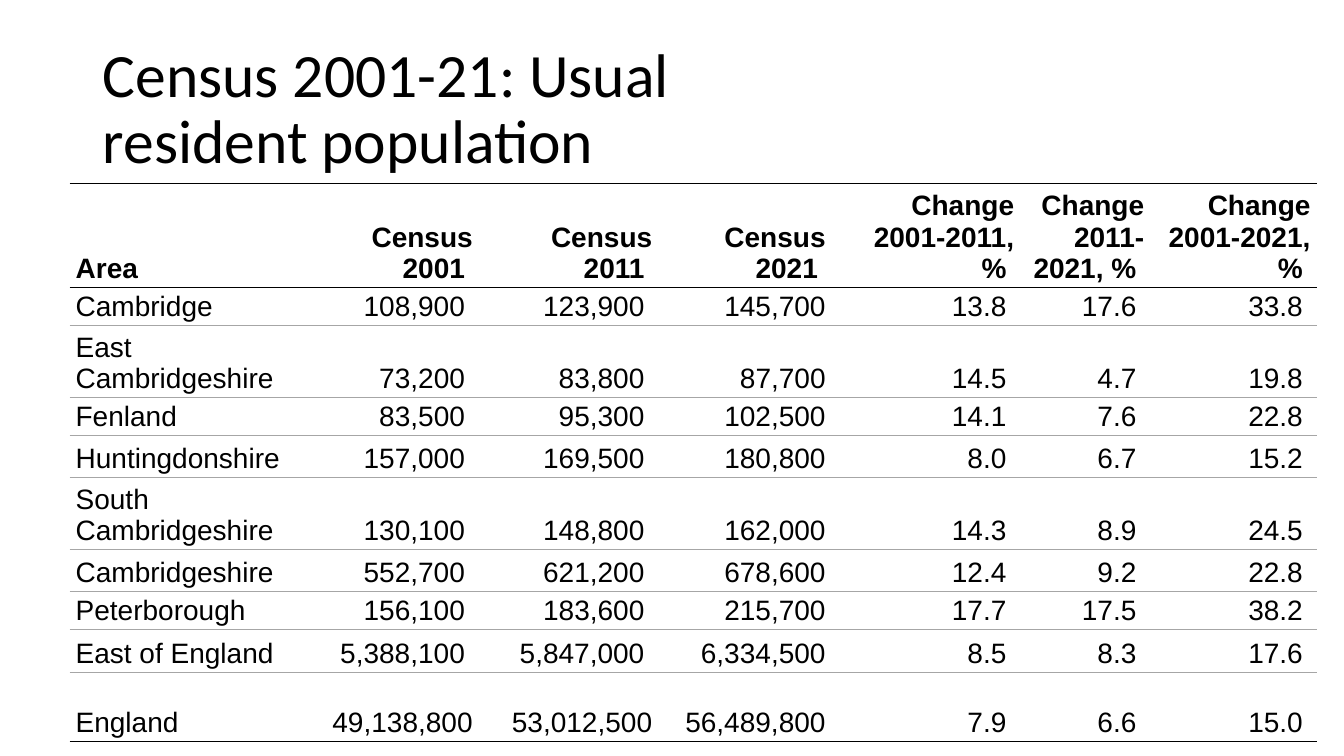
import pptx
import pptx.dml.color
import pptx.enum.text
import pptx.oxml
import pptx.oxml.ns
import pptx.util

Inches = pptx.util.Inches
Pt = pptx.util.Pt
ALIGN = pptx.enum.text.PP_ALIGN
ANCHOR = pptx.enum.text.MSO_ANCHOR

NBSP = chr(160)
NO_STYLE_NO_GRID = "{2D5ABB26-0587-4C30-8999-92F81FD0307C}"

COL_WIDTHS = [2.42, 1.64, 1.78, 1.72, 1.87, 1.29, 1.65]
ROW_HEIGHTS = [1.03, 0.38, 0.71, 0.38, 0.42, 0.71, 0.42, 0.38, 0.42, 0.69]
CENSUS_ROWS = [
    ["Area", "Census 2001", "Census 2011", "Census 2021",
     "Change 2001-2011, %", "Change 2011-2021, %", "Change 2001-2021, %"],
    ["Cambridge", "108,900", "123,900", "145,700", "13.8", "17.6", "33.8"],
    ["East Cambridgeshire", "73,200", "83,800", "87,700", "14.5", "4.7", "19.8"],
    ["Fenland", "83,500", "95,300", "102,500", "14.1", "7.6", "22.8"],
    ["Huntingdonshire", "157,000", "169,500", "180,800", "8.0", "6.7", "15.2"],
    ["South Cambridgeshire", "130,100", "148,800", "162,000", "14.3", "8.9", "24.5"],
    ["Cambridgeshire", "552,700", "621,200", "678,600", "12.4", "9.2", "22.8"],
    ["Peterborough", "156,100", "183,600", "215,700", "17.7", "17.5", "38.2"],
    ["East of England", "5,388,100", "5,847,000", "6,334,500", "8.5", "8.3", "17.6"],
    ["England", "49,138,800", "53,012,500", "56,489,800", "7.9", "6.6", "15.0"],
]


def rgb(color):
    return pptx.dml.color.RGBColor.from_string(color)


def pad(text, row, col):
    """Set a figure off from the cell edges with no-break spaces."""
    if row == 0 or col in (0, 4, 5, 6):
        return text + NBSP
    if col == 3:
        return text
    return NBSP + text + ("" if row == len(CENSUS_ROWS) - 1 else NBSP)


class Deck:
    ink, paper, rule = "000000", "FFFFFF", "A6A6A6"
    title_font, table_font = "Calibri", "Arial"

    def __init__(self):
        self.prs = pptx.Presentation()
        self.prs.slide_width = Inches(13.33)
        self.prs.slide_height = Inches(7.5)
        self.s = self.prs.slides.add_slide(self.prs.slide_layouts[6])

    def run(self, p, text, font, size, bold=False):
        r = p.add_run()
        r.text = text
        r.font.name = font
        r.font.size = Pt(size)
        r.font.bold = bold
        r.font.color.rgb = rgb(self.ink)

    def title(self, text, x, y, w, h):
        tf = self.s.shapes.add_textbox(Inches(x), Inches(y), Inches(w), Inches(h)).text_frame
        tf.word_wrap = True
        tf.vertical_anchor = ANCHOR.MIDDLE
        p = tf.paragraphs[0]
        p.line_spacing = 0.9
        self.run(p, text, self.title_font, 44)

    def border(self, cell, top, bottom):
        tc_pr = cell._tc.get_or_add_tcPr()
        for i, (side, color) in enumerate([("lnT", top), ("lnB", bottom)]):
            tc_pr.insert(i, pptx.oxml.parse_xml(
                f'<a:{side} {pptx.oxml.ns.nsdecls("a")} w="{Pt(1)}"><a:solidFill>'
                f'<a:srgbClr val="{color}"/></a:solidFill></a:{side}>'))

    def cell(self, cell, text, align, bold):
        cell.margin_left = cell.margin_right = Inches(0.06)
        cell.margin_top = cell.margin_bottom = Inches(0.03)
        cell.vertical_anchor = ANCHOR.BOTTOM
        cell.fill.solid()
        cell.fill.fore_color.rgb = rgb(self.paper)
        p = cell.text_frame.paragraphs[0]
        p.alignment = align
        self.run(p, text, self.table_font, 20, bold)

    def table(self, rows, x, y, widths, heights):
        tbl = self.s.shapes.add_table(
            len(rows), len(widths), Inches(x), Inches(y),
            Inches(sum(widths)), Inches(sum(heights))).table
        tbl.first_row = tbl.horz_banding = False
        tbl._tbl.tblPr.find(pptx.oxml.ns.qn("a:tableStyleId")).text = NO_STYLE_NO_GRID
        for column, width in zip(tbl.columns, widths):
            column.width = Inches(width)
        last = len(rows) - 1
        for i, values in enumerate(rows):
            tbl.rows[i].height = Inches(heights[i])
            top = self.ink if i <= 1 else self.rule
            bottom = self.ink if i in (0, last) else self.rule
            for j, value in enumerate(values):
                cell = tbl.cell(i, j)
                self.cell(cell, pad(value, i, j), ALIGN.RIGHT if j else ALIGN.LEFT, i == 0)
                self.border(cell, top, bottom)


def main():
    deck = Deck()
    deck.table(CENSUS_ROWS, 0.69, 1.82, COL_WIDTHS, ROW_HEIGHTS)
    deck.title("Census 2001-21: Usual resident population", 0.92, 0.34, 7.58, 1.51)
    deck.prs.save("out.pptx")


if __name__ == "__main__":
    main()
